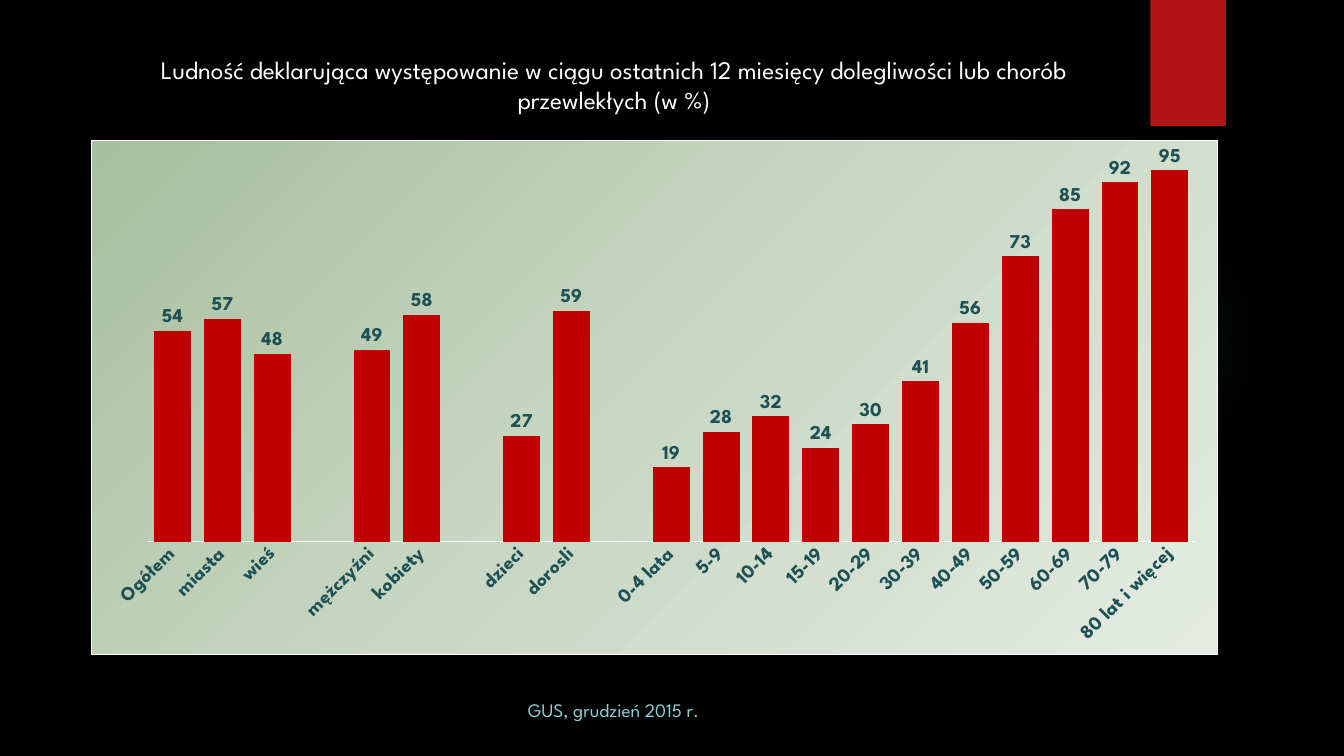
from dataclasses import dataclass

from lxml import etree
from pptx import Presentation
from pptx import util as u
from pptx.chart.data import CategoryChartData
from pptx.dml.color import RGBColor
from pptx.enum import chart as ch, shapes, text
from pptx.oxml import parse_xml
from pptx.oxml.ns import nsdecls, qn


@dataclass(frozen=True)
class Theme:
    font: str = "League Spartan"
    background: str = "000000"
    white: str = "FFFFFF"
    source: str = "8AD0D6"
    ribbon: str = "B01513"
    glow: str = "50B9C1"
    bar: str = "C00000"
    label: str = "1E5155"
    panel: tuple = ((0, "A7C09D", 100), (50, "C9D7C4", 100), (100, "E5EBE2", 100))
    title_size: float = 18
    label_size: float = 14
    source_size: float = 13.6
    base_size: float = 10


THEME = Theme()

# Groups are set apart by an empty category.
GROUPS = [
    [("Ogółem", 54), ("miasta", 57), ("wieś", 48)],
    [("mężczyźni", 49), ("kobiety", 58)],
    [("dzieci", 27), ("dorosli", 59)],
    [("0-4 lata", 19), ("5-9", 28), ("10-14", 32), ("15-19", 24),
     ("20-29", 30), ("30-39", 41), ("40-49", 56), ("50-59", 73),
     ("60-69", 85), ("70-79", 92), ("80 lat i więcej", 95)],
]


def rgb(color):
    return RGBColor.from_string(color)


def apply(target, formats):
    for name, value in formats.items():
        setattr(target, name, value)


def style_font(font, size, color, bold=False):
    apply(font, {"name": THEME.font, "size": u.Pt(size), "bold": bold})
    font.color.rgb = rgb(color)


def gradient(stops, direction):
    """Return a gradFill element; stops are (position %, colour, opacity %)."""
    stop_xml = "".join(
        f'<a:gs pos="{pos * 1000}"><a:srgbClr val="{color}">'
        f'<a:alpha val="{alpha * 1000}"/></a:srgbClr></a:gs>'
        for pos, color, alpha in stops)
    return parse_xml(f'<a:gradFill {nsdecls("a")} rotWithShape="1">'
                     f'<a:gsLst>{stop_xml}</a:gsLst>{direction}</a:gradFill>')


def add_plain_shape(slide, kind, box):
    shape = slide.shapes.add_shape(kind, *map(u.Inches, box))
    shape.shadow.inherit = False
    shape.line.fill.background()
    return shape


def add_decor(slide, glow_box, ribbon_box):
    glow = add_plain_shape(slide, shapes.MSO_SHAPE.OVAL, glow_box)
    circle = ('<a:path path="circle"><a:fillToRect l="50000" t="50000" '
              'r="50000" b="50000"/></a:path>')
    stops = [(0, THEME.glow, 7), (36, THEME.glow, 6), (69, THEME.glow, 0)]
    outline = glow.element.spPr.find(qn("a:prstGeom"))
    outline.addnext(gradient(stops, circle))

    ribbon = add_plain_shape(slide, shapes.MSO_SHAPE.RECTANGLE, ribbon_box)
    ribbon.fill.solid()
    ribbon.fill.fore_color.rgb = rgb(THEME.ribbon)


def add_centred_text(slide, box, wording, size, color, top_margin=0.05):
    frame = slide.shapes.add_textbox(*map(u.Inches, box)).text_frame
    apply(frame, {"word_wrap": True, "margin_top": u.Inches(top_margin),
                  "vertical_anchor": text.MSO_ANCHOR.TOP})
    paragraph = frame.paragraphs[0]
    paragraph.alignment = text.PP_ALIGN.CENTER
    run = paragraph.add_run()
    run.text = wording
    style_font(run.font, size, color)


def survey_data():
    data = CategoryChartData(number_format="0")
    bars = []
    for group in GROUPS:
        bars += ([("", None)] if bars else []) + group
    data.categories = [name for name, _ in bars]
    data.add_series("Series 1", [share for _, share in bars])
    return data


def paint_panel(chart):
    """Give the chart area its diagonal gradient and thin border."""
    panel = parse_xml(
        f'<c:spPr {nsdecls("c", "a")}><a:ln w="{u.Pt(0.75)}"><a:solidFill>'
        f'<a:srgbClr val="{THEME.white}"/></a:solidFill></a:ln></c:spPr>')
    panel.insert(0, gradient(THEME.panel, '<a:lin ang="2700000" scaled="0"/>'))
    chart.element.find(qn("c:chart")).addnext(panel)


def place_plot(chart, **fractions):
    """Fix the inner plot area as fractions of the chart."""
    plot_area = chart.element.find(qn("c:chart")).find(qn("c:plotArea"))
    for old in plot_area.findall(qn("c:layout")):
        plot_area.remove(old)
    layout = etree.Element(qn("c:layout"))
    manual = etree.SubElement(layout, qn("c:manualLayout"))
    settings = {"layoutTarget": "inner", "xMode": "edge", "yMode": "edge", **fractions}
    for name, value in settings.items():
        etree.SubElement(manual, qn(f"c:{name}")).set("val", str(value))
    plot_area.insert(0, layout)


def add_survey_chart(slide, box):
    chart = slide.shapes.add_chart(
        ch.XL_CHART_TYPE.COLUMN_CLUSTERED, *map(u.Inches, box), survey_data()).chart
    apply(chart, {"has_legend": False, "has_title": False})
    style_font(chart.font, THEME.base_size, THEME.white)
    paint_panel(chart)
    place_plot(chart, x=0.05, y=0.02, w=0.93, h=0.76)

    shares = chart.value_axis
    apply(shares, {"visible": False, "has_major_gridlines": False,
                   "minimum_scale": 0, "maximum_scale": 100})

    people = chart.category_axis
    apply(people, {"major_tick_mark": ch.XL_TICK_MARK.NONE,
                   "minor_tick_mark": ch.XL_TICK_MARK.NONE})
    style_font(people.tick_labels.font, THEME.label_size, THEME.label, True)
    slant = people.format.line
    slant.width = u.Pt(0.75)
    slant.color.rgb = rgb(THEME.white)
    label_body = people.tick_labels.font._element.getparent().getparent().getparent()
    label_body.find(qn("a:bodyPr")).set("rot", "-2700000")

    plot = chart.plots[0]
    apply(plot, {"gap_width": 35, "overlap": -27, "vary_by_categories": False,
                 "has_data_labels": True})
    labels = plot.data_labels
    apply(labels, {"show_value": True, "number_format": "0",
                   "number_format_is_linked": False,
                   "position": ch.XL_LABEL_POSITION.OUTSIDE_END})
    style_font(labels.font, THEME.label_size, THEME.label, True)
    bars = plot.series[0]
    bars.invert_if_negative = False
    bars.format.fill.solid()
    bars.format.fill.fore_color.rgb = rgb(THEME.bar)


def build_survey_slide(deck):
    slide = deck.slides.add_slide(deck.slide_layouts[6])
    slide.background.fill.solid()
    slide.background.fill.fore_color.rgb = rgb(THEME.background)
    add_decor(slide, (9.41, 1.83, 3.08, 3.08), (11.41, 0, 0.75, 1.25))
    add_centred_text(slide, (1.26, 6.5, 9.65, 0.62), "GUS, grudzień 2015 r.",
                     THEME.source_size, THEME.source, top_margin=0.43)
    add_centred_text(
        slide, (1.15, 0.49, 9.88, 1.31),
        "Ludność deklarująca występowanie w ciągu ostatnich 12 miesięcy "
        "dolegliwości lub chorób przewlekłych (w %)",
        THEME.title_size, THEME.white)
    add_survey_chart(slide, (0.9, 1.39, 11.18, 5.11))


def main():
    deck = Presentation()
    apply(deck, {"slide_width": u.Inches(13.33), "slide_height": u.Inches(7.5)})
    build_survey_slide(deck)
    deck.save("out.pptx")


if __name__ == "__main__":
    main()
